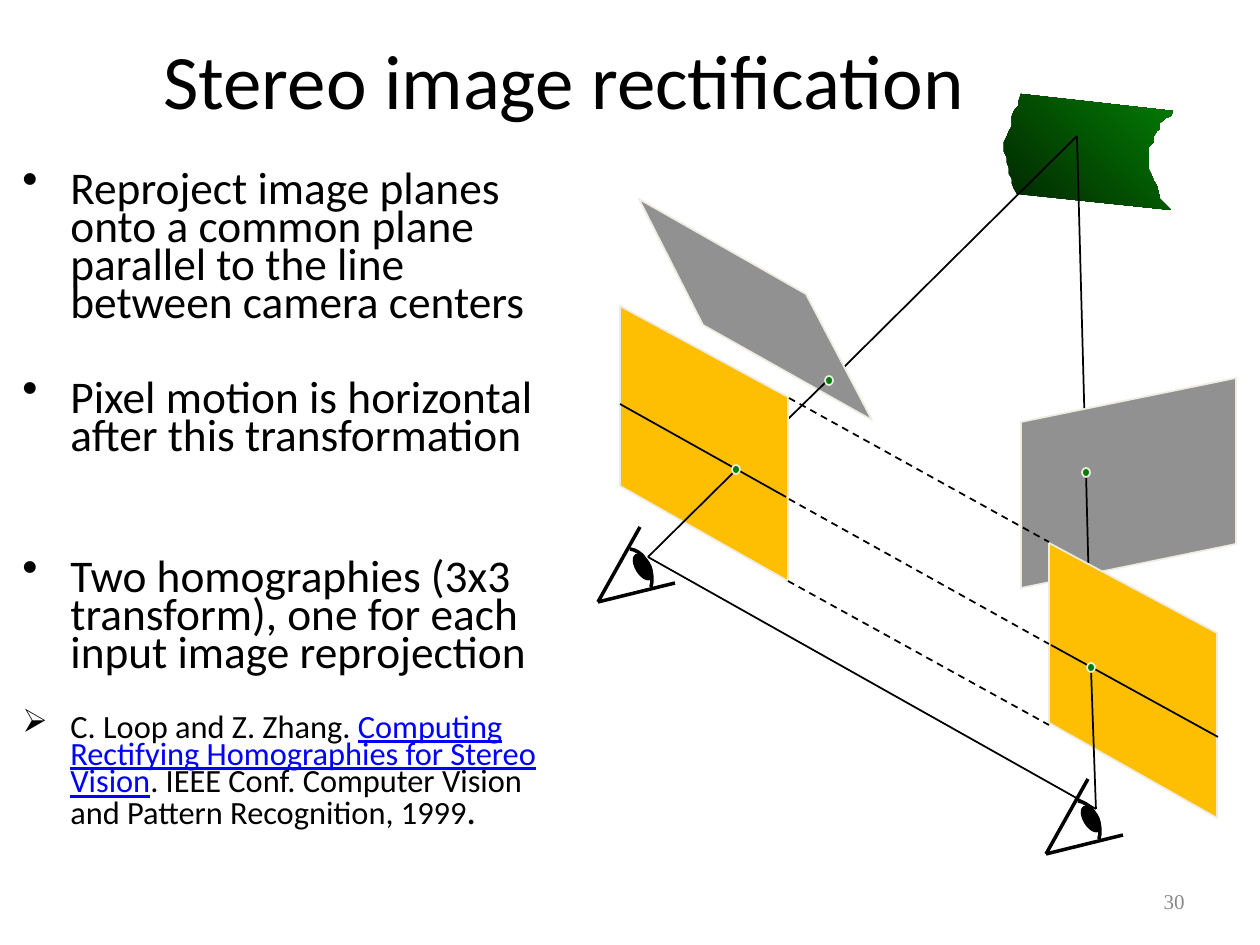
import pptx
import pptx.util
import pptx.dml.color
import pptx.enum.dml
import pptx.enum.shapes
import pptx.enum.text
import pptx.oxml.ns
from lxml import etree

PX = 914400 / 126  # EMU in one px
BLACK = pptx.dml.color.RGBColor(0x00, 0x00, 0x00)
GREY = pptx.dml.color.RGBColor(0x91, 0x91, 0x91)
YELLOW = pptx.dml.color.RGBColor(0xFE, 0xBF, 0x02)
CREAM = pptx.dml.color.RGBColor(0xEE, 0xEC, 0xE1)
GREEN = pptx.dml.color.RGBColor(0x03, 0x7C, 0x03)
DARK_GREEN = pptx.dml.color.RGBColor(0x01, 0x25, 0x01)
LINK_BLUE = pptx.dml.color.RGBColor(0x00, 0x00, 0xFF)
PAGE_GREY = pptx.dml.color.RGBColor(0x89, 0x89, 0x89)
ALIGN = pptx.enum.text.PP_ALIGN
MIDDLE = pptx.enum.text.MSO_ANCHOR.MIDDLE
OVAL = pptx.enum.shapes.MSO_SHAPE.OVAL

deck = pptx.Presentation()
deck.slide_width = round(1260 * PX)
deck.slide_height = round(945 * PX)
slide = deck.slides.add_slide(deck.slide_layouts[6])
shapes = slide.shapes


def draw_line(x1, y1, x2, y2, width=1, dashed=False):
    line = shapes.add_connector(
        pptx.enum.shapes.MSO_CONNECTOR.STRAIGHT,
        *[round(v * PX) for v in (x1, y1, x2, y2)])
    line.line.color.rgb = BLACK
    line.line.width = pptx.util.Pt(width)
    if dashed:
        line.line.dash_style = pptx.enum.dml.MSO_LINE.DASH
    etree.SubElement(line._element.spPr, pptx.oxml.ns.qn("a:effectLst"))


def draw_outline(points, fill=None, closed=True):
    builder = shapes.build_freeform(*points[0], scale=PX)
    builder.add_line_segments(points[1:], close=closed)
    outline = builder.convert_to_shape()
    outline.shadow.inherit = False
    outline.line.color.rgb = CREAM
    outline.line.width = pptx.util.Pt(1)
    if fill is None:
        outline.fill.background()
    else:
        outline.fill.solid()
        outline.fill.fore_color.rgb = fill
    return outline


# Green surface patch seen by both cameras
surface = draw_outline([
    (1021, 94), (1019, 100), (1019, 105), (1014, 111), (1012, 116), (1012, 126),
    (1009, 131), (1007, 136), (1004, 142), (1004, 152), (1007, 158), (1007, 163),
    (1009, 168), (1009, 174), (1012, 179), (1012, 184), (1014, 189), (1017, 194),
    (1171, 210), (1160, 199), (1159, 194), (1157, 186), (1154, 181), (1152, 176),
    (1149, 170), (1149, 147), (1154, 142), (1154, 136), (1157, 131), (1160, 129),
    (1160, 123), (1166, 118), (1171, 116), (1173, 111)])
surface.line.fill.background()
surface.fill.gradient()
surface.fill.gradient_angle = 45
for stop, color in zip(surface.fill.gradient_stops, (DARK_GREEN, GREEN)):
    stop.color.rgb = color

# Baseline, image planes and rays, from back to front
draw_line(648, 557, 1096, 809)
draw_line(830, 381, 1077, 136)
draw_outline([(703, 325), (872, 420), (806, 294), (639, 199)], GREY)
draw_line(1086, 472, 1077, 136)
draw_line(736, 470, 830, 378)
draw_outline([(620, 486), (788, 581), (788, 397), (620, 306)], YELLOW)
draw_outline([(1021, 422), (1021, 588), (1236, 544), (1236, 378)], GREY)
draw_line(1091, 669, 1086, 472)
draw_outline([(1049, 723), (1217, 818), (1217, 633), (1049, 543)], YELLOW)
draw_line(648, 557, 736, 470)
draw_line(1096, 809, 1091, 669)

# Eyes at the two camera centers
lid_curve = [(630, 549), (645, 552), (655, 570), (651, 587)]
STEPS = 10
for dx, dy in ((0, 0), (448, 252)):
    eyelid = []
    for step in range(STEPS + 1):
        t = step / STEPS
        weights = ((1 - t) ** 3, 3 * t * (1 - t) ** 2, 3 * t * t * (1 - t), t ** 3)
        eyelid.append((sum(w * x for w, (x, y) in zip(weights, lid_curve)) + dx,
                       sum(w * y for w, (x, y) in zip(weights, lid_curve)) + dy))
    cornea = draw_outline(eyelid, closed=False)
    cornea.line.color.rgb = BLACK
    cornea.line.width = pptx.util.Pt(2)
    draw_line(640 + dx, 527 + dy, 598 + dx, 602 + dy, 2)
    pupil = shapes.add_shape(OVAL, *[round(v * PX) for v in (636 + dx, 553 + dy, 14, 28)])
    pupil.rotation = 329
    pupil.shadow.inherit = False
    pupil.fill.solid()
    pupil.fill.fore_color.rgb = BLACK
    pupil.line.color.rgb = BLACK
    pupil.line.width = pptx.util.Pt(1)
    draw_line(598 + dx, 602 + dy, 675 + dx, 583 + dy, 2)

# Scanlines on the rectified planes and dashed links between them
draw_line(789, 398, 1049, 542, dashed=True)
draw_line(788, 581, 1049, 725, dashed=True)
draw_line(620, 404, 786, 497)
draw_line(1051, 645, 1218, 737)
draw_line(789, 499, 1049, 644, dashed=True)

# Projected points
for x, y in ((1086, 472), (829, 380), (1091, 667), (736, 469)):
    point = shapes.add_shape(OVAL, *[round(v * PX) for v in (x - 4, y - 4, 8, 9)])
    point.shadow.inherit = False
    point.fill.solid()
    point.fill.fore_color.rgb = GREEN
    point.line.color.rgb = CREAM
    point.line.width = pptx.util.Pt(1)

# Title and page number
for text, box, align, size, font, color in (
        ("Stereo image rectification", (-3, 0, 1134, 158), ALIGN.CENTER, 44, "Calibri", BLACK),
        ("30", (903, 876, 294, 50), ALIGN.RIGHT, 12, "Times New Roman", PAGE_GREY)):
    frame = shapes.add_textbox(*[round(v * PX) for v in box]).text_frame
    frame.word_wrap = True
    frame.vertical_anchor = MIDDLE
    frame.text = text
    frame.paragraphs[0].alignment = align
    label = frame.paragraphs[0].runs[0].font
    label.size, label.name, label.color.rgb = pptx.util.Pt(size), font, color

# Bullets: mark, space before in points, runs of (text, size, is link)
bullets = (
    ("•", 5, [("Reproject image planes onto a common plane parallel to the line "
               "between camera centers", 25.9, False)]),
    ("•", 32, [("Pixel motion is horizontal after this transformation", 25.9, False)]),
    ("•", 59, [("Two homographies (3x3 transform), one for each input image "
                "reprojection", 25.9, False)]),
    ("➢", 23, [("C. Loop and Z. Zhang. ", 18.5, False),
               ("Computing Rectifying Homographies for Stereo Vision", 18.5, True),
               (". IEEE Conf. Computer Vision and Pattern Recognition, 1999", 18.5, False),
               (".", 22.2, False)]),
)
body = shapes.add_textbox(*[round(v * PX) for v in (10, 168, 577, 764)]).text_frame
body.word_wrap = True
for index, (mark, gap, runs) in enumerate(bullets):
    bullet = body.add_paragraph() if index else body.paragraphs[0]
    bullet.line_spacing = 0.7
    bullet.space_before = pptx.util.Pt(gap)
    properties = bullet._p.get_or_add_pPr()
    properties.set("marL", str(round(48 * PX)))
    properties.set("indent", str(round(-48 * PX)))
    etree.SubElement(properties, pptx.oxml.ns.qn("a:buChar")).set("char", mark)
    for text, size, is_link in runs:
        run = bullet.add_run()
        run.text = text
        run.font.name = "Calibri"
        run.font.size = pptx.util.Pt(size)
        run.font.color.rgb = LINK_BLUE if is_link else BLACK
        run.font.underline = is_link

deck.save("out.pptx")
